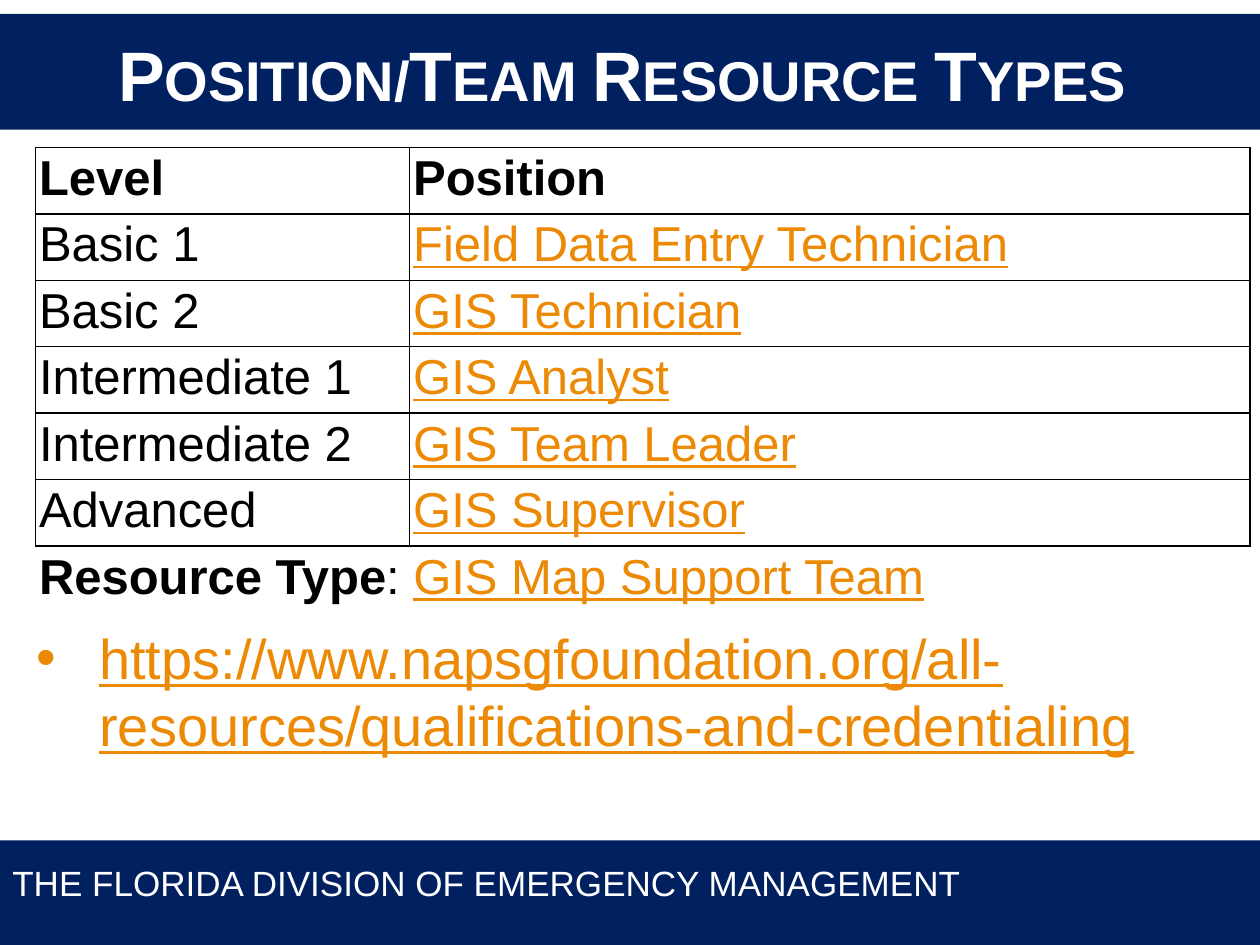
from lxml.etree import SubElement
from pptx import Presentation
from pptx.dml.color import RGBColor
from pptx.enum.shapes import MSO_SHAPE as Shape
from pptx.enum.text import MSO_ANCHOR as Anchor, PP_ALIGN as Align
from pptx.oxml.ns import qn
from pptx.util import Inches, Pt

NAVY = RGBColor(0x00, 0x20, 0x60)
WHITE = RGBColor(0xFF, 0xFF, 0xFF)
BLACK = RGBColor(0x00, 0x00, 0x00)
ORANGE = RGBColor(0xED, 0x8A, 0x05)

# The grid has 100 columns and 75 rows of square units
UNIT = Inches(0.1)
COLUMNS, ROWS = 100, 75

POSITIONS = [
    ("Basic 1", "Field Data Entry Technician"),
    ("Basic 2", "GIS Technician"),
    ("Intermediate 1", "GIS Analyst"),
    ("Intermediate 2", "GIS Team Leader"),
    ("Advanced", "GIS Supervisor"),
]


def units(*counts):
    return [round(count * UNIT) for count in counts]


class SlideBuilder:
    font_name = "Arial"

    def __init__(self, slide):
        self.slide = slide

    def span(self, para, text, size, color, bold=False, link=False):
        span = para.add_run()
        span.text = text
        font = span.font
        font.name, font.size, font.bold = self.font_name, Pt(size), bold
        font.color.rgb = color
        if link:
            font.underline = True
        return span

    def band(self, top, height, color):
        band = self.slide.shapes.add_shape(
            Shape.RECTANGLE, *units(0, top, COLUMNS, height))
        band.shadow.inherit = False
        band.fill.solid()
        band.fill.fore_color.rgb = color
        band.line.fill.background()

    def text_box(self, left, top, width, height, anchor=Anchor.TOP):
        box = self.slide.shapes.add_textbox(*units(left, top, width, height))
        box.text_frame.word_wrap = True
        box.text_frame.vertical_anchor = anchor
        return box.text_frame.paragraphs[0]

    def bullet(self, para, indent, color):
        props = para._p.get_or_add_pPr()
        props.set("marL", str(Inches(indent)))
        props.set("indent", str(-Inches(indent)))
        bullet_color = SubElement(props, qn("a:buClr"))
        SubElement(bullet_color, qn("a:srgbClr"), val=str(color))
        SubElement(props, qn("a:buFont"), typeface=self.font_name)
        SubElement(props, qn("a:buChar"), char="•")

    def table(self, left, top, widths, row_height, row_count):
        frame = self.slide.shapes.add_table(
            row_count, len(widths),
            *units(left, top, sum(widths), row_height * row_count))
        table = frame.table
        table.first_row = table.horz_banding = False
        for column, width in zip(table.columns, units(*widths)):
            column.width = width
        for row in table.rows:
            row.height = units(row_height)[0]
        return table

    def cell(self, cell, spans, sides="LRTB"):
        """Fill a cell with (text, style) spans and rule the given sides."""
        cell.margin_left = cell.margin_right = Inches(0.03)
        cell.margin_top = cell.margin_bottom = Inches(0.03)
        props = cell._tc.get_or_add_tcPr()
        for side in "LRTB":
            line = SubElement(props, qn(f"a:ln{side}"), w=str(Pt(1)))
            if side in sides:
                fill = SubElement(line, qn("a:solidFill"))
                SubElement(fill, qn("a:srgbClr"), val=str(BLACK))
            else:
                SubElement(line, qn("a:noFill"))
        cell.fill.solid()
        cell.fill.fore_color.rgb = WHITE
        for text, style in spans:
            color = ORANGE if style.get("link") else BLACK
            self.span(cell.text_frame.paragraphs[0], text, 28, color, **style)


def main():
    deck = Presentation()
    deck.slide_width, deck.slide_height = units(COLUMNS, ROWS)
    builder = SlideBuilder(deck.slides.add_slide(deck.slide_layouts[6]))

    # Header and footer bands
    builder.band(1.1, 9.2, NAVY)
    builder.band(10.6, 0.6, WHITE)
    builder.band(66.7, 8.3, NAVY)
    footer = builder.text_box(0, 68.3, 80.7, 5.3)
    footer.line_spacing = 0.9
    builder.span(footer, "THE FLORIDA DIVISION OF EMERGENCY MANAGEMENT", 20, WHITE)

    # Title in small capitals
    title = builder.text_box(0, 1.7, COLUMNS, 8.3, Anchor.MIDDLE)
    title.alignment = Align.CENTER
    span = builder.span(title, "Position/Team Resource Types ", 40, WHITE, bold=True)
    span.font._element.set("cap", "small")

    # Web address below the table
    address = builder.text_box(1.9, 49, 97.3, 17)
    builder.bullet(address, 0.5, ORANGE)
    builder.span(
        address,
        "https://www.napsgfoundation.org/all-resources/qualifications-and-credentialing",
        32, ORANGE, link=True)

    # Position table, closed by a merged row without side rules
    bold, link = {"bold": True}, {"link": True}
    last = len(POSITIONS) + 1
    table = builder.table(2.8, 11.7, [29.7, 66.7], 5.19, last + 1)
    for column, heading in enumerate(("Level", "Position")):
        builder.cell(table.cell(0, column), [(heading, bold)])
    for row, (level, position) in enumerate(POSITIONS, 1):
        builder.cell(table.cell(row, 0), [(level, {})])
        builder.cell(table.cell(row, 1), [(position, link)])
    table.cell(last, 0).merge(table.cell(last, 1))
    builder.cell(table.cell(last, 0), [
        ("Resource Type", bold), (": ", {}), ("GIS Map Support Team", link)], "T")
    builder.cell(table.cell(last, 1), [], "T")

    deck.save("out.pptx")


if __name__ == "__main__":
    main()
